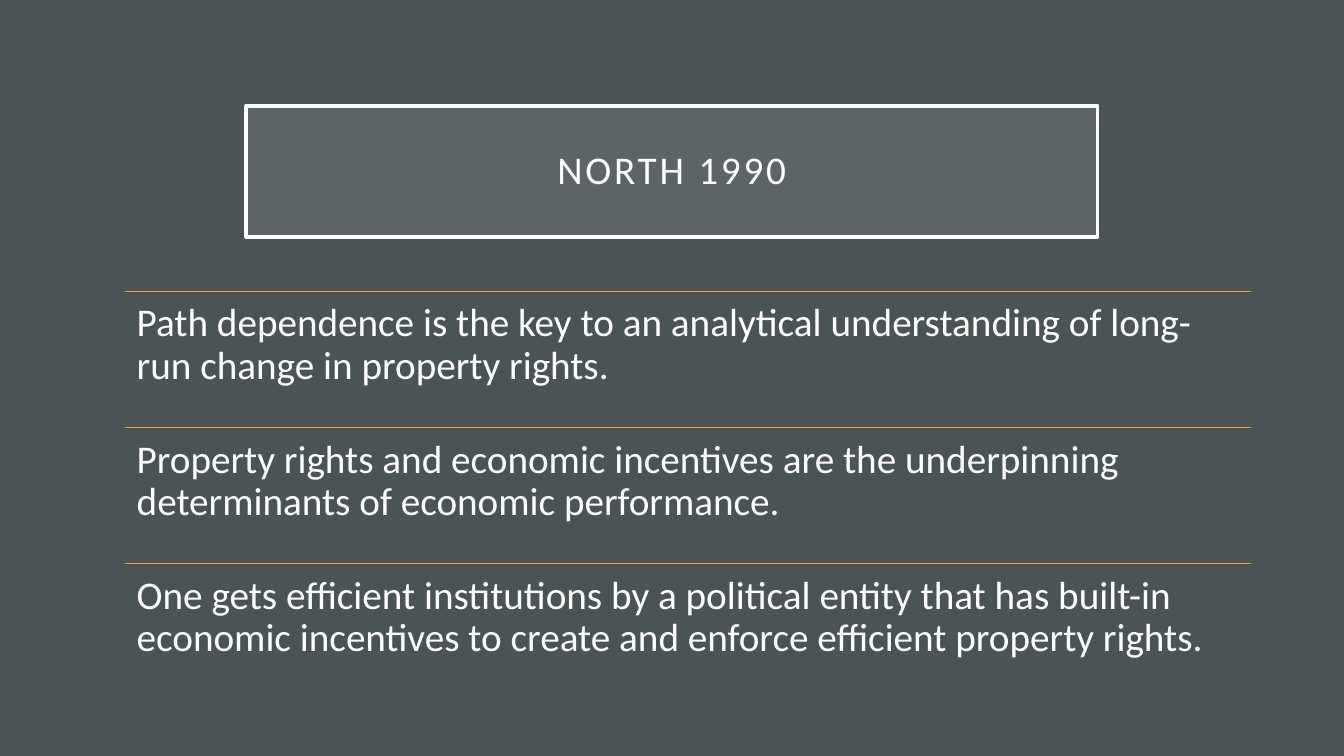
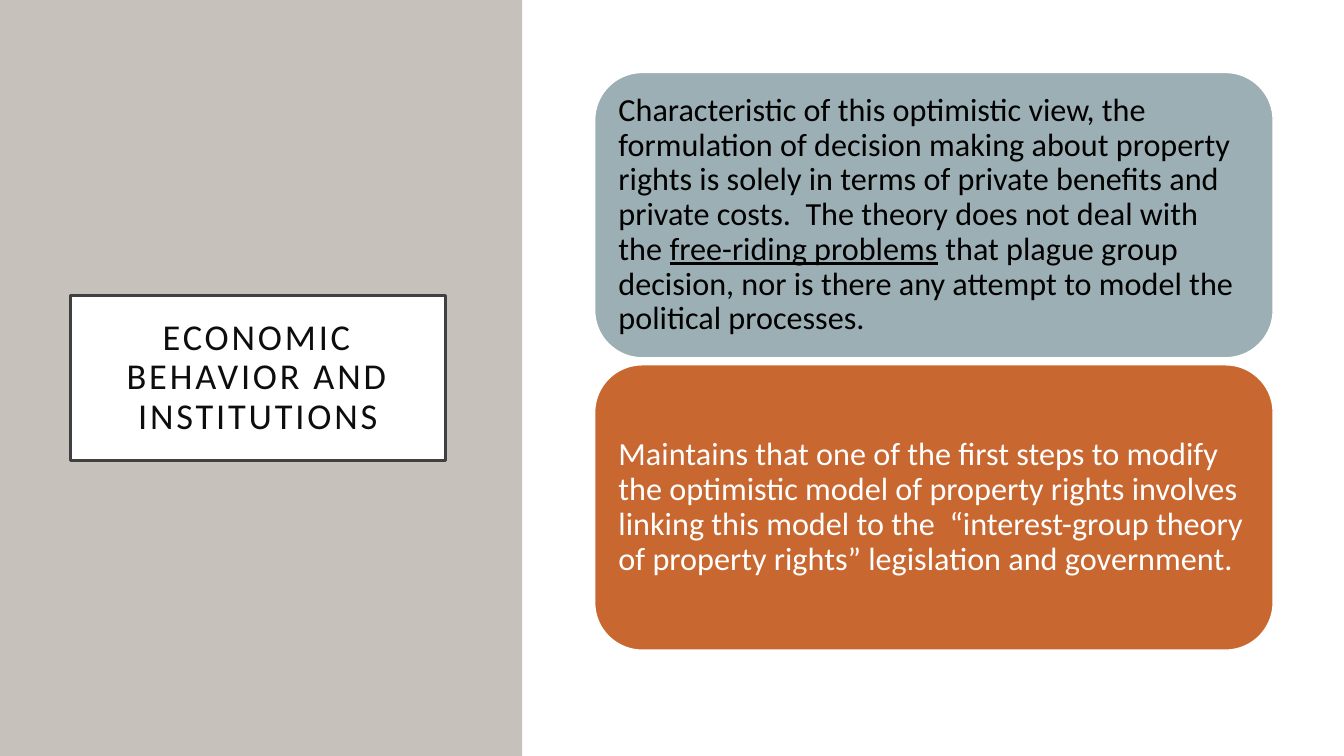
from dataclasses import dataclass

import lxml.etree
import pptx
import pptx.dml.color
import pptx.enum.shapes
import pptx.enum.text
import pptx.oxml.ns
import pptx.presentation
import pptx.shapes.autoshape
import pptx.slide
import pptx.text.text
import pptx.util

Pt = pptx.util.Pt
Align = pptx.enum.text.PP_ALIGN
Anchor = pptx.enum.text.MSO_ANCHOR
ShapeType = pptx.enum.shapes.MSO_SHAPE
qn = pptx.oxml.ns.qn

FONT = "Calibri"
LINE_SPACING = 0.9
COLORS = {
    "slate": "4A5356",
    "white": "FFFFFF",
    "black": "000000",
    "gold": "F6A21D",
    "stone": "C6C1BA",
    "frame": "404040",
    "ink": "0D0D0D",
    "mist": "9BAFB5",
    "rust": "C96731",
}


@dataclass(frozen=True)
class Area:
    left: float
    top: float
    width: float
    height: float

    def lengths(self) -> list[pptx.util.Length]:
        return [Pt(value) for value in (self.left, self.top, self.width, self.height)]

    def below(self, pitch: float, steps: int) -> "Area":
        return Area(self.left, self.top + pitch * steps, self.width, self.height)


@dataclass(frozen=True)
class TitleStyle:
    area: Area
    size: float
    text: str
    fill: str
    line: str
    opacity: int = 100


@dataclass(frozen=True)
class Span:
    text: str
    underline: bool = False


@dataclass(frozen=True)
class Card:
    fill: str
    color: str
    spans: tuple[Span, ...]


STATEMENTS = (
    "Path dependence is the key to an analytical understanding of long-run change "
    "in property rights.",
    "Property rights and economic incentives are the underpinning determinants of "
    "economic performance.",
    "One gets efficient institutions by a political entity that has built-in economic "
    "incentives to create and enforce efficient property rights.",
)
STATEMENT_AREA = Area(89.3, 208.1, 804.2, 97.2)

CARDS = (
    Card("mist", "black", (
        Span("Characteristic of this optimistic view, the formulation of decision making "
             "about property rights is solely in terms of private benefits and private "
             "costs.  The theory does not deal with the "),
        Span("free-riding problems", underline=True),
        Span(" that plague group decision, nor is there any attempt to model the "
             "political processes."),
    )),
    Card("rust", "white", (
        Span("Maintains that one of the first steps to modify the optimistic model of "
             "property rights involves linking this model to the  “interest-group theory "
             "of property rights” legislation and government."),
    )),
)
CARD_AREA = Area(424.8, 51.8, 484.6, 203.8)
CARD_PITCH = 208.8

NORTH_TITLE = TitleStyle(Area(175.7, 75.6, 608.4, 93.6), 28, "white", "white", "white", 10)
BEHAVIOR_TITLE = TitleStyle(Area(50.4, 211, 267.8, 118), 26, "ink", "white", "frame")


def rgb(name: str) -> pptx.dml.color.RGBColor:
    return pptx.dml.color.RGBColor.from_string(COLORS[name])


def paint(shape: pptx.shapes.autoshape.Shape, fill: str,
          line: str | None = None, line_width: float = 1) -> None:
    shape.fill.solid()
    shape.fill.fore_color.rgb = rgb(fill)
    if line is None:
        shape.line.fill.background()
    else:
        shape.line.color.rgb = rgb(line)
        shape.line.width = Pt(line_width)


def set_frame(frame: pptx.text.text.TextFrame, inset: float, anchor: Anchor) -> None:
    frame.word_wrap = True
    frame.auto_size = pptx.enum.text.MSO_AUTO_SIZE.NONE
    frame.vertical_anchor = anchor
    frame.margin_left = frame.margin_right = Pt(inset)
    frame.margin_top = frame.margin_bottom = Pt(inset)


def write(para: pptx.text.text._Paragraph, spans: tuple[Span, ...], size: float,
          color: str, align: Align = Align.LEFT) -> None:
    for span in spans:
        run = para.add_run()
        run.text = span.text
        if span.underline:
            run.font.underline = True
    para.alignment = align
    para.line_spacing = LINE_SPACING
    para.font.name = FONT
    para.font.size = Pt(size)
    para.font.color.rgb = rgb(color)


def add_page(deck: pptx.presentation.Presentation, background: str) -> pptx.slide.Slide:
    page = deck.slides.add_slide(deck.slide_layouts[5])
    page.background.fill.solid()
    page.background.fill.fore_color.rgb = rgb(background)
    return page


def set_title(page: pptx.slide.Slide, text: str, style: TitleStyle) -> None:
    title = page.shapes.title
    title.left, title.top, title.width, title.height = style.area.lengths()
    paint(title, style.fill, style.line, 2.5)
    if style.opacity < 100:
        color = title.fill._xPr.find(qn("a:solidFill"))[0]
        lxml.etree.SubElement(color, qn("a:alpha"), val=str(style.opacity * 1000))
    set_frame(title.text_frame, 14.4, Anchor.MIDDLE)
    para = title.text_frame.paragraphs[0]
    write(para, (Span(text),), style.size, style.text, Align.CENTER)
    for run in para.runs:
        run.font._element.set("spc", "200")


def add_shape(page: pptx.slide.Slide, kind: ShapeType, area: Area, fill: str,
              line: str | None = None) -> pptx.shapes.autoshape.Shape:
    shape = page.shapes.add_shape(kind, *area.lengths())
    shape.shadow.inherit = False
    paint(shape, fill, line)
    return shape


def add_statement(page: pptx.slide.Slide, area: Area, text: str) -> None:
    """Draw a rule with the text below it."""
    left, top, width, _ = area.lengths()
    rule = page.shapes.add_connector(
        pptx.enum.shapes.MSO_CONNECTOR.STRAIGHT, left, top, left + width, top)
    rule.line.color.rgb = rgb("gold")
    rule.line.width = Pt(1)
    lxml.etree.SubElement(rule._element.spPr, qn("a:effectLst"))
    box = page.shapes.add_textbox(*area.lengths())
    set_frame(box.text_frame, 8.4, Anchor.TOP)
    write(box.text_frame.paragraphs[0], (Span(text),), 28, "white")


def add_card(page: pptx.slide.Slide, area: Area, card: Card) -> None:
    shape = add_shape(page, ShapeType.ROUNDED_RECTANGLE, area, card.fill, "white")
    set_frame(shape.text_frame, 7.2, Anchor.MIDDLE)
    write(shape.text_frame.paragraphs[0], card.spans, 23, card.color)


def build_north(deck: pptx.presentation.Presentation) -> None:
    page = add_page(deck, "slate")
    set_title(page, "NORTH 1990", NORTH_TITLE)
    for index, text in enumerate(STATEMENTS):
        add_statement(page, STATEMENT_AREA.below(STATEMENT_AREA.height, index), text)


def build_behavior(deck: pptx.presentation.Presentation) -> None:
    page = add_page(deck, "white")
    panel = add_shape(page, ShapeType.RECTANGLE, Area(0, 0, 373, 540), "stone")
    page.shapes.title._element.addprevious(panel._element)
    set_title(page, "ECONOMIC BEHAVIOR AND INSTITUTIONS", BEHAVIOR_TITLE)
    for index, card in enumerate(CARDS):
        add_card(page, CARD_AREA.below(CARD_PITCH, index), card)


def main() -> None:
    deck = pptx.Presentation()
    deck.slide_width, deck.slide_height = Pt(960), Pt(540)
    build_north(deck)
    build_behavior(deck)
    deck.save("out.pptx")


if __name__ == "__main__":
    main()
